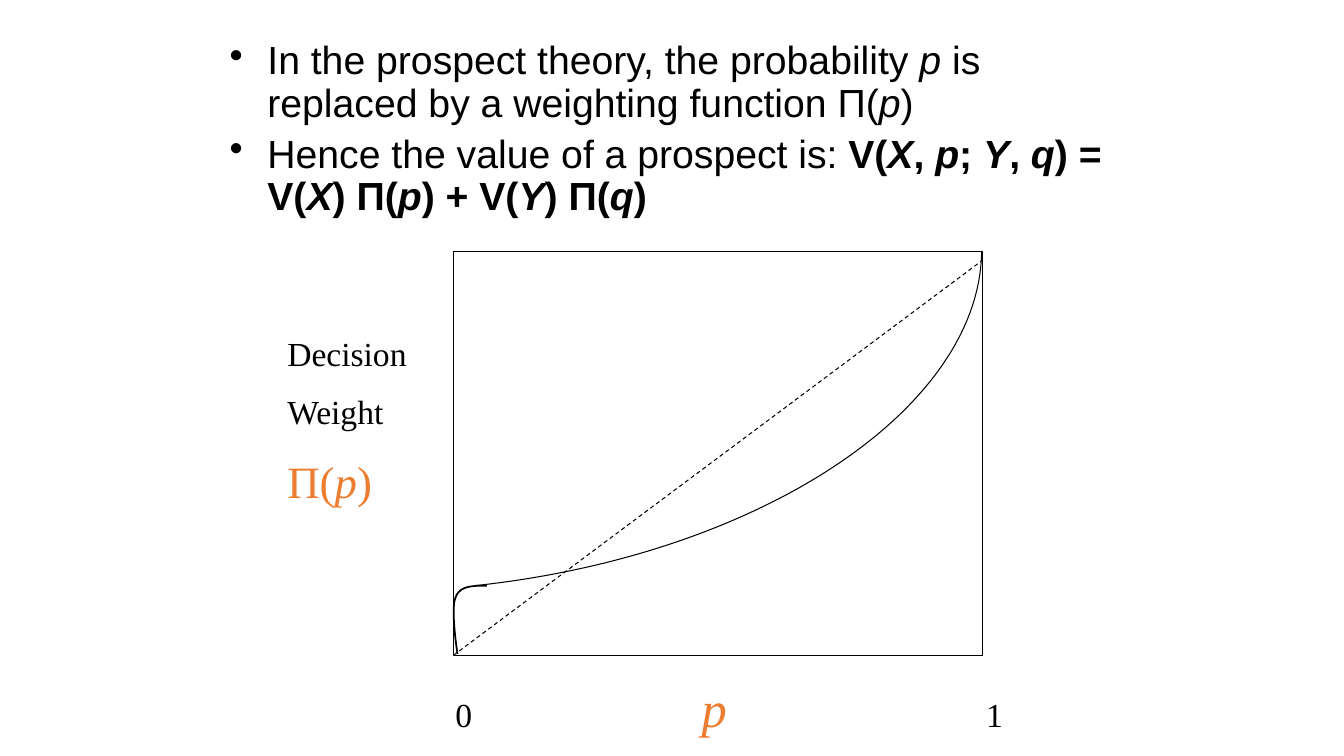
from lxml import etree
from pptx import Presentation
from pptx.dml.color import RGBColor
from pptx.enum.dml import MSO_LINE
from pptx.enum.shapes import MSO_CONNECTOR, MSO_SHAPE
from pptx.oxml.ns import qn
from pptx.util import Cm, Pt

RECTANGLE = MSO_SHAPE.RECTANGLE
STRAIGHT = MSO_CONNECTOR.STRAIGHT
DASH = MSO_LINE.DASH

BLACK = "000000"
ORANGE = "ED7D31"
SANS = "Arial"
SERIF = "Times New Roman"


def color(value):
    return RGBColor.from_string(value)


def bezier(start, control1, control2, end, steps=60):
    """Points along a cubic curve."""
    points = []
    for step in range(steps + 1):
        t = step / steps
        weights = ((1 - t) ** 3, 3 * t * (1 - t) ** 2, 3 * t * t * (1 - t), t ** 3)
        corners = (start, control1, control2, end)
        points.append(tuple(sum(w * c[axis] for w, c in zip(weights, corners))
                            for axis in (0, 1)))
    return points


class SlideWriter:
    def __init__(self, page):
        self.page = page

    def style_line(self, line, width):
        line.color.rgb = color(BLACK)
        line.width = Pt(width)

    def frame(self, left, top, width, height):
        shape = self.page.shapes.add_shape(
            RECTANGLE, Cm(left), Cm(top), Cm(width), Cm(height))
        shape.shadow.inherit = False
        shape.fill.background()
        self.style_line(shape.line, 0.75)

    def dashed_line(self, start, end):
        line = self.page.shapes.add_connector(
            STRAIGHT, Cm(start[0]), Cm(start[1]), Cm(end[0]), Cm(end[1]))
        self.style_line(line.line, 0.75)
        line.line.dash_style = DASH
        etree.SubElement(line._element.spPr, qn("a:effectLst"))

    def curve(self, points, width):
        points = [(Cm(x), Cm(y)) for x, y in points]
        builder = self.page.shapes.build_freeform(*points[0], scale=1.0)
        builder.add_line_segments(points[1:], close=False)
        shape = builder.convert_to_shape()
        shape.shadow.inherit = False
        shape.fill.background()
        self.style_line(shape.line, width)

    def text_box(self, left, top, width, height):
        box = self.page.shapes.add_textbox(Cm(left), Cm(top), Cm(width), Cm(height))
        box.text_frame.word_wrap = True
        return box.text_frame

    def paragraph(self, frame, text, font, size, ink=BLACK, before=0):
        """Add a paragraph; parts between underscores are italic."""
        paragraph = frame.paragraphs[0]
        if paragraph.runs:
            paragraph = frame.add_paragraph()
        paragraph.space_before = Pt(before)
        paragraph.font.name = font
        paragraph.font.size = Pt(size)
        paragraph.font.color.rgb = color(ink)
        self.spans(paragraph, text)
        return paragraph

    def spans(self, paragraph, text, bold=None):
        for index, part in enumerate(text.split("_")):
            if part:
                span = paragraph.add_run()
                span.text = part
                span.font.bold = bold
                span.font.italic = True if index % 2 else None

    def bullet(self, paragraph):
        paragraph.line_spacing = 0.9
        properties = paragraph._p.get_or_add_pPr()
        properties.set("marL", str(Cm(0.95)))
        properties.set("indent", str(Cm(-0.95)))
        mark = etree.Element(qn("a:buChar"), char="•")
        properties.find(qn("a:defRPr")).addprevious(mark)

    def tab_stops(self, paragraph, positions):
        properties = paragraph._p.get_or_add_pPr()
        stops = etree.Element(qn("a:tabLst"))
        for position in positions:
            etree.SubElement(stops, qn("a:tab"), pos=str(Cm(position)), algn="l")
        properties.find(qn("a:defRPr")).addprevious(stops)


def main():
    deck = Presentation()
    deck.slide_width, deck.slide_height = Cm(33.87), Cm(19.05)
    writer = SlideWriter(deck.slides.add_slide(deck.slide_layouts[6]))

    # Plot area with the diagonal
    writer.dashed_line((11.43, 16.51), (24.77, 6.55))
    writer.frame(11.43, 6.35, 13.34, 10.16)

    # Probability axis
    axis = writer.text_box(11.23, 16.94, 14.6, 1.78)
    labels = writer.paragraph(axis, "0\t_p_\t1", SERIF, 24)
    writer.tab_stops(labels, (6.2, 13.37))
    symbol = labels.runs[1].font
    symbol.size = Pt(36)
    symbol.color.rgb = color(ORANGE)

    # Decision weight axis
    weight = writer.text_box(6.99, 8.26, 3.81, 4.88)
    writer.paragraph(weight, "Decision", SERIF, 24, before=12)
    writer.paragraph(weight, "Weight", SERIF, 24, before=13)
    writer.paragraph(weight, "Π(_p_)", SERIF, 32, ORANGE, before=16)

    # Weighting function
    writer.curve(bezier((11.96, 14.76), (19.13, 14), (24.71, 10.31), (24.74, 6.32)), 0.75)

    # Explanation
    body = writer.text_box(5.54, 0.91, 22.86, 5.21)
    writer.bullet(writer.paragraph(
        body, "In the prospect theory, the probability _p_ is replaced by "
        "a weighting function Π(_p_)", SANS, 28, before=6))
    value = writer.paragraph(
        body, "Hence the value of a prospect is: ", SANS, 28, before=6)
    writer.spans(value, "V(_X_, _p_; _Y_, _q_) = V(_X_) Π(_p_) + V(_Y_) Π(_q_)", bold=True)
    writer.bullet(value)

    # Hook of the curve near zero
    hook = bezier((12.27, 14.76), (11.91, 14.76), (11.58, 14.76), (11.48, 15.06), 20)
    hook += bezier((11.48, 15.06), (11.35, 15.34), (11.53, 16.48), (11.53, 16.48), 20)[1:]
    writer.curve(hook, 1.25)

    deck.save("out.pptx")


if __name__ == "__main__":
    main()
